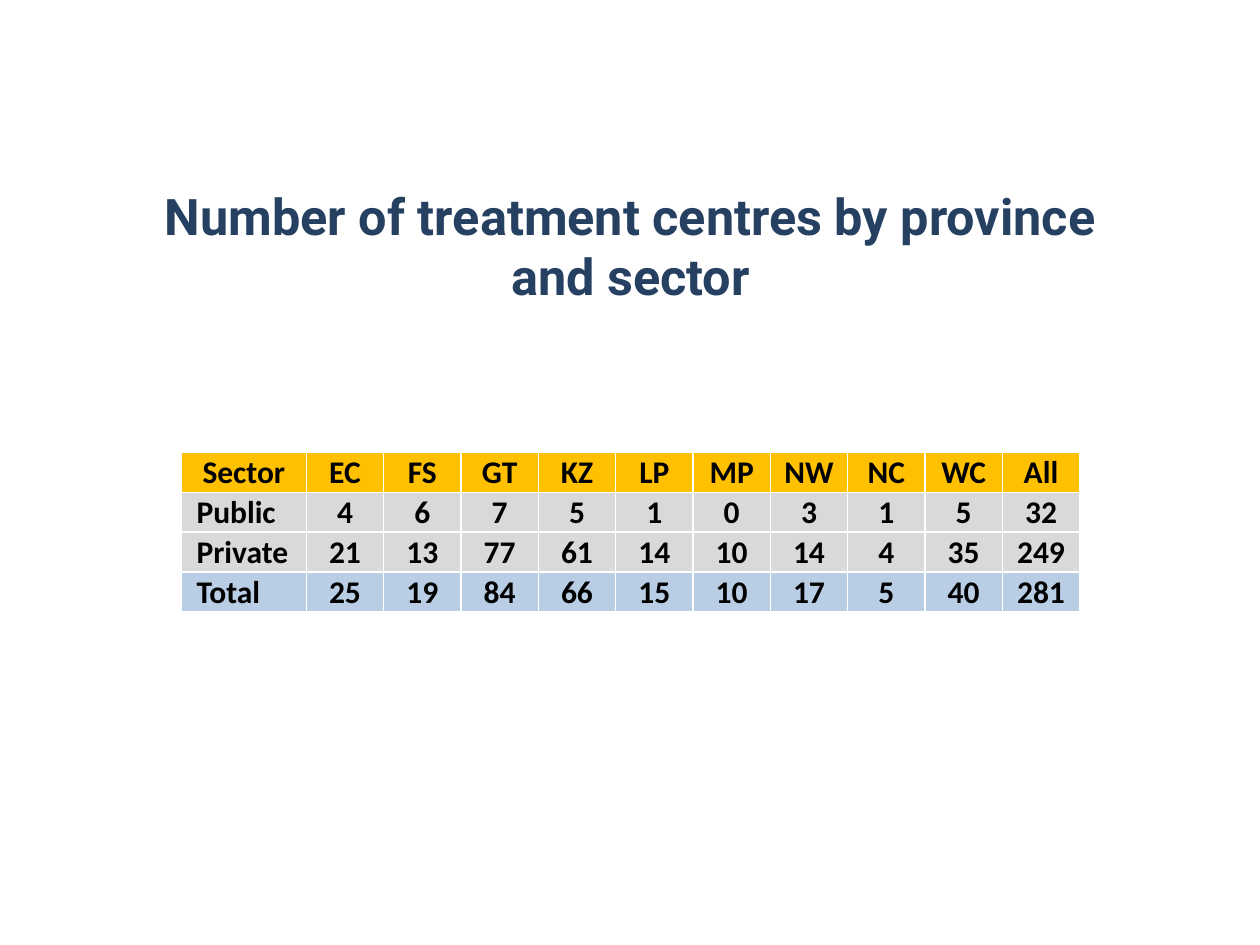
from lxml import etree
from pptx import Presentation
from pptx.dml.color import RGBColor
from pptx.enum.text import MSO_ANCHOR, MSO_AUTO_SIZE, PP_ALIGN
from pptx.oxml.ns import qn
from pptx.util import Inches, Pt

LEFT, CENTER = PP_ALIGN.LEFT, PP_ALIGN.CENTER
MIDDLE = MSO_ANCHOR.MIDDLE
NO_AUTOFIT = MSO_AUTO_SIZE.NONE
TITLE_ONLY = 5

COLORS = {
    "title": "254061",
    "text": "000000",
    "header": "FFC000",
    "body": "D9D9D9",
    "total": "B9CDE5",
    "border": "FFFFFF",
}
PROVINCES = ["EC", "FS", "GT", "KZ", "LP", "MP", "NW", "NC", "WC"]
CENTRES = {
    "Public": [4, 6, 7, 5, 1, 0, 3, 1, 5],
    "Private": [21, 13, 77, 61, 14, 10, 14, 4, 35],
}


class SlideBuilder:
    """Holds the style and the slide; lengths are shares of the slide's size."""

    title_font, title_size = "Roboto", 28.8
    table_font, table_size = "Calibri", 18
    border_width = 1
    cell_margin, label_margin = 0.01, 0.12

    def __init__(self, presentation):
        self.width = presentation.slide_width
        self.height = presentation.slide_height
        self.slide = presentation.slides.add_slide(presentation.slide_layouts[TITLE_ONLY])

    def box(self, left, top, width, height):
        return (int(left * self.width), int(top * self.height),
                int(width * self.width), int(height * self.height))

    def format_text(self, text_frame, font, size, color, alignment):
        for paragraph in text_frame.paragraphs:
            paragraph.alignment = alignment
            for run in paragraph.runs:
                run.font.name = font
                run.font.size = Pt(size)
                run.font.bold = True
                run.font.color.rgb = RGBColor.from_string(COLORS[color])

    def title(self, text, *shares):
        shape = self.slide.shapes.title
        shape.left, shape.top, shape.width, shape.height = self.box(*shares)
        text_frame = shape.text_frame
        text_frame.text = text
        text_frame.word_wrap = True
        text_frame.auto_size = NO_AUTOFIT
        text_frame.vertical_anchor = MIDDLE
        self.format_text(text_frame, self.title_font, self.title_size, "title", CENTER)

    def table(self, rows, fills, label_share, *shares):
        row_count, column_count = len(rows), len(rows[0])
        left, top, width, height = self.box(*shares)
        table = self.slide.shapes.add_table(
            row_count, column_count, left, top, width, height).table
        label_width = int(label_share * width)
        for index, column in enumerate(table.columns):
            column.width = label_width if index == 0 else (width - label_width) // (column_count - 1)
        for row in table.rows:
            row.height = height // row_count
        for row_index, (values, fill) in enumerate(zip(rows, fills)):
            for column_index, value in enumerate(values):
                is_label = row_index > 0 and column_index == 0
                self.cell(table.cell(row_index, column_index), value, fill, is_label)

    def cell(self, cell, value, fill, is_label):
        cell.fill.solid()
        cell.fill.fore_color.rgb = RGBColor.from_string(COLORS[fill])
        cell.vertical_anchor = MIDDLE
        cell.margin_left = Inches(self.label_margin if is_label else self.cell_margin)
        cell.margin_right = cell.margin_top = Inches(self.cell_margin)
        cell.margin_bottom = 0
        cell.text_frame.text = str(value)
        self.format_text(cell.text_frame, self.table_font, self.table_size, "text",
                         LEFT if is_label else CENTER)
        self.borders(cell)

    def borders(self, cell):
        # Border lines must come before the fill in the cell properties
        properties = cell._tc.get_or_add_tcPr()
        for position, side in enumerate(("a:lnL", "a:lnR", "a:lnT", "a:lnB")):
            line = etree.Element(qn(side), w=str(Pt(self.border_width)))
            solid = etree.SubElement(line, qn("a:solidFill"))
            etree.SubElement(solid, qn("a:srgbClr"), val=COLORS["border"])
            properties.insert(position, line)


def main():
    presentation = Presentation()
    presentation.slide_width = Inches(10)
    presentation.slide_height = Inches(7.5)
    builder = SlideBuilder(presentation)

    # Title
    builder.title("Number of treatment centres by province and sector",
                  0.091, 0.208, 0.819, 0.103)

    # Table: sectors by province, with sums across and down
    totals = [sum(values) for values in zip(*CENTRES.values())]
    sectors = {**CENTRES, "Total": totals}
    rows = [["Sector", *PROVINCES, "All"]]
    rows += [[name, *values, sum(values)] for name, values in sectors.items()]
    fills = ["header", "body", "body", "total"]
    builder.table(rows, fills, 0.139, 0.144, 0.479, 0.713, 0.164)

    presentation.save("out.pptx")


if __name__ == "__main__":
    main()
